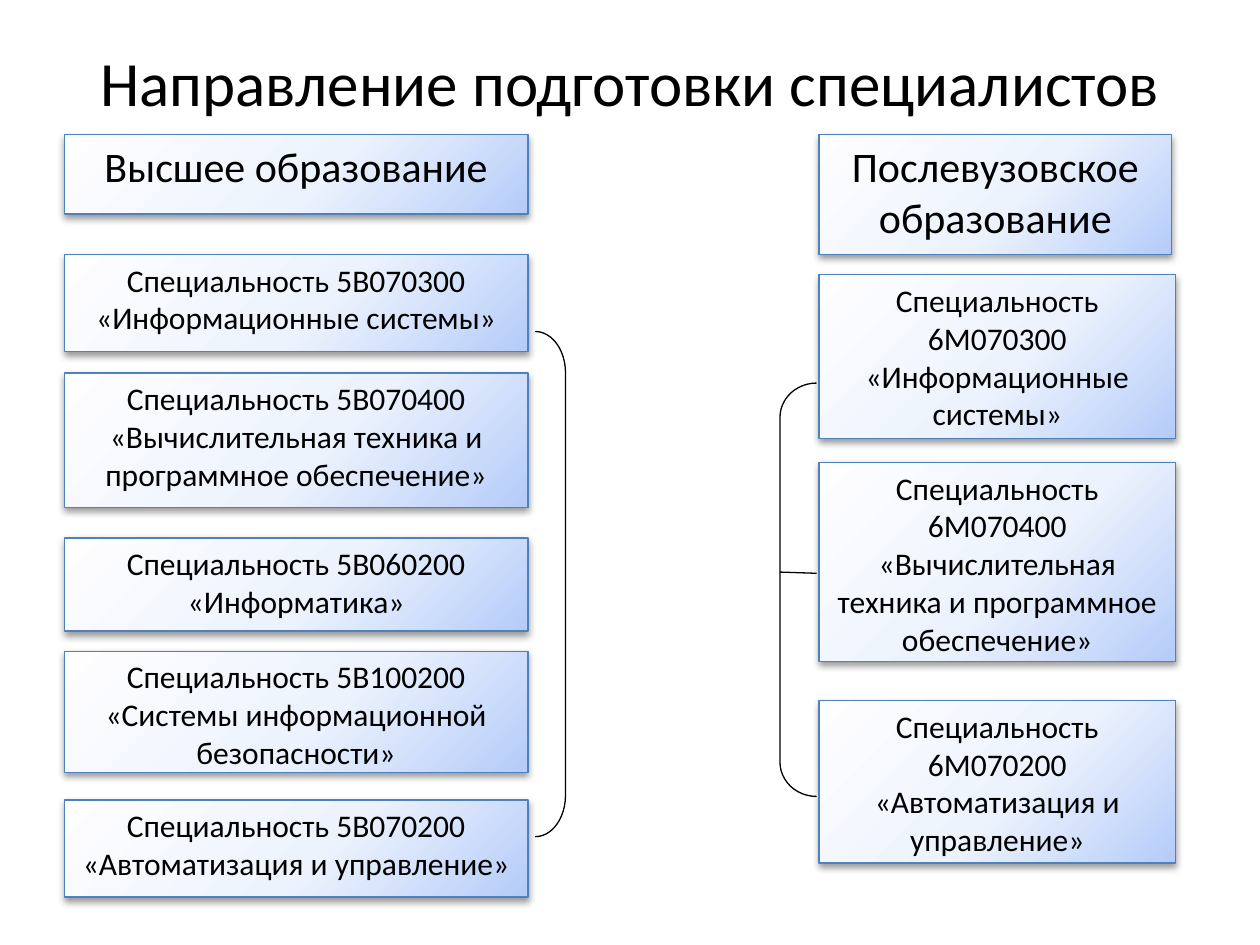
from lxml import etree
from pptx import Presentation
from pptx.dml.color import RGBColor
from pptx.enum.shapes import MSO_CONNECTOR, MSO_SHAPE
from pptx.enum.text import MSO_ANCHOR, MSO_AUTO_SIZE, PP_ALIGN
from pptx.oxml import parse_xml
from pptx.oxml.ns import qn
from pptx.util import Pt

RECT = MSO_SHAPE.RECTANGLE
LEFT_BRACKET, RIGHT_BRACKET = MSO_SHAPE.LEFT_BRACKET, MSO_SHAPE.RIGHT_BRACKET
STRAIGHT = MSO_CONNECTOR.STRAIGHT
CENTER = PP_ALIGN.CENTER
TOP, MIDDLE = MSO_ANCHOR.TOP, MSO_ANCHOR.MIDDLE
BLACK = RGBColor(0x00, 0x00, 0x00)
BLUE = RGBColor(0x4F, 0x81, 0xBD)
FONT = "Calibri"
NS = 'xmlns:a="http://schemas.openxmlformats.org/drawingml/2006/main"'

# Content: each column has a left edge, a header and its specialities
TITLE = "Направление подготовки специалистов"
HEADER_TOP = 77
COLUMNS = [
    {
        "left": 36.7, "width": 265,
        "header": ("Высшее образование", 265, 45.4),
        "items": [  # text, top, height
            ("Специальность 5В070300 «Информационные системы»", 145.4, 55.4),
            ("Специальность 5В070400 «Вычислительная техника и программное обеспечение»", 213.1, 77),
            ("Специальность 5В060200 «Информатика»", 307.4, 53.3),
            ("Специальность 5В100200 «Системы информационной безопасности»", 372.2, 69.1),
            ("Специальность 5В070200 «Автоматизация и управление»", 457.2, 55.4),
        ],
    },
    {
        "left": 468, "width": 203.8,
        "header": ("Послевузовское образование", 201.6, 68.4),
        "items": [
            ("Специальность 6М070300 «Информационные системы»", 157, 93.6),
            ("Специальность 6М070400 «Вычислительная техника и программное обеспечение»", 264.2, 113.8),
            ("Специальность 6М070200 «Автоматизация и управление»", 400.3, 92.9),
        ],
    },
]
BRACKETS = [  # shape, left, top, width, height, curvature
    (RIGHT_BRACKET, 305.9, 189.4, 17.3, 288.7, 1.368),
    (LEFT_BRACKET, 445.7, 218.9, 20.9, 236.2, 0.939),
]
BRANCH = (466.6, 327.6, 445.7, 326.9)

GRADIENT = f"""<a:gradFill {NS} rotWithShape="1"><a:gsLst>
<a:gs pos="0"><a:srgbClr val="FEFEFF"/></a:gs>
<a:gs pos="55000"><a:srgbClr val="EDF3FD"/></a:gs>
<a:gs pos="100000"><a:srgbClr val="B5CCF9"/></a:gs></a:gsLst>
<a:path path="circle"><a:fillToRect l="-40000" t="-90000" r="140000" b="190000"/></a:path>
</a:gradFill>"""
SHADOW = f"""<a:outerShdw {NS} blurRad="{Pt(4.1)}" dist="{Pt(2)}" dir="5400000" rotWithShape="0">
<a:srgbClr val="000000"><a:alpha val="40000"/></a:srgbClr></a:outerShdw>"""


def add_text(tf, text, size, anchor):
    tf.word_wrap = True
    tf.auto_size = MSO_AUTO_SIZE.NONE
    tf.vertical_anchor = anchor
    p = tf.paragraphs[0]
    p.alignment = CENTER
    r = p.add_run()
    r.text = text
    r.font.name, r.font.size = FONT, Pt(size)
    r.font.color.rgb = BLACK
    return p


def set_line(shape, color):
    shape.line.color.rgb = color
    shape.line.width = Pt(0.75)


def add_box(slide, text, left, top, width, height, size):
    sp = slide.shapes.add_shape(RECT, Pt(left), Pt(top), Pt(width), Pt(height))
    set_line(sp, BLUE)
    sp.shadow.inherit = False
    sp_pr = sp._element.spPr
    sp_pr.find(qn("a:prstGeom")).addnext(parse_xml(GRADIENT))
    sp_pr.find(qn("a:effectLst")).append(parse_xml(SHADOW))
    p = add_text(sp.text_frame, text, size, TOP)
    p.space_after = Pt(10)


prs = Presentation()
prs.slide_width, prs.slide_height = Pt(720), Pt(540)
slide = prs.slides.add_slide(prs.slide_layouts[5])

# Title
title = slide.shapes.title
title.left, title.top, title.width, title.height = Pt(36), Pt(21.6), Pt(648), Pt(49.7)
add_text(title.text_frame, TITLE, 36, MIDDLE)

# Columns of boxes
for col in COLUMNS:
    text, width, height = col["header"]
    add_box(slide, text, col["left"], HEADER_TOP, width, height, 24)
    for text, top, height in col["items"]:
        add_box(slide, text, col["left"], top, col["width"], height, 18)

# Brackets joining the specialities
for kind, left, top, width, height, curve in BRACKETS:
    sp = slide.shapes.add_shape(kind, Pt(left), Pt(top), Pt(width), Pt(height))
    sp.adjustments[0] = curve
    sp.fill.background()
    sp.shadow.inherit = False
    set_line(sp, BLACK)

# Middle branch of the left bracket
branch = slide.shapes.add_connector(STRAIGHT, *(Pt(v) for v in BRANCH))
set_line(branch, BLACK)
etree.SubElement(branch._element.spPr, qn("a:effectLst"))

prs.save("out.pptx")
